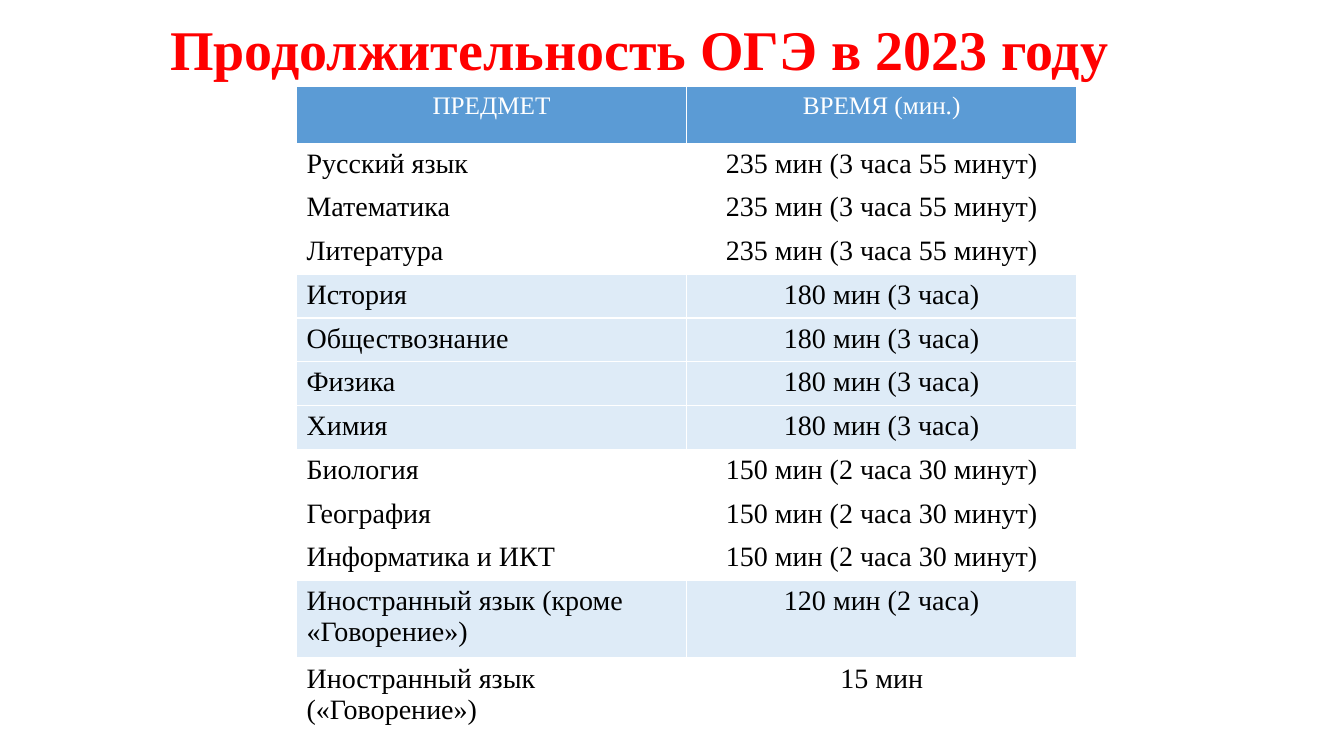
"""Build a slide with the table of exam durations by subject."""
import pptx
import pptx.util
import pptx.dml.color
import pptx.enum.text

Inches = pptx.util.Inches
Pt = pptx.util.Pt
RGBColor = pptx.dml.color.RGBColor
ALIGN = pptx.enum.text.PP_ALIGN

RED = RGBColor(0xFF, 0x00, 0x00)
BLUE = RGBColor(0x5B, 0x9B, 0xD5)
PALE = RGBColor(0xDE, 0xEB, 0xF7)
WHITE = RGBColor(0xFF, 0xFF, 0xFF)
BLACK = RGBColor(0x00, 0x00, 0x00)
FACE = "Times New Roman"

GROUPS = [
    ("235 мин (3 часа 55 минут)", None, 0.43,
     ["Русский язык", "Математика", "Литература"]),
    ("180 мин (3 часа)", PALE, 0.43,
     ["История", "Обществознание", "Физика", "Химия"]),
    ("150 мин (2 часа 30 минут)", None, 0.43,
     ["Биология", "География", "Информатика и ИКТ"]),
    ("120 мин (2 часа)", PALE, 0.77, ["Иностранный язык (кроме «Говорение»)"]),
    ("15 мин", None, 0.77, ["Иностранный язык («Говорение»)"]),
]


def style(para, size, color, bold=False):
    para.font.name = FACE
    para.font.size = Pt(size)
    para.font.bold = bold
    para.font.color.rgb = color


deck = pptx.Presentation()
deck.slide_width = Inches(13.33)
deck.slide_height = Inches(7.5)
slide = deck.slides.add_slide(deck.slide_layouts[6])

title = slide.shapes.add_textbox(
    Inches(1.59), Inches(0.21), Inches(11.26), Inches(0.65)).text_frame
title.word_wrap = True
title.vertical_anchor = pptx.enum.text.MSO_ANCHOR.BOTTOM
head = title.paragraphs[0]
head.text = "Продолжительность ОГЭ в\u00a02023 году".replace("\u00a0", " ")
head.alignment = ALIGN.JUSTIFY
head.line_spacing = 0.8
style(head, 40, RED, True)

rows = [("ПРЕДМЕТ", "ВРЕМЯ (мин.)", BLUE, 0.56)]
for time, fill, height, names in GROUPS:
    rows += [(name, time, fill, height) for name in names]

total = sum(row[3] for row in rows)
table = slide.shapes.add_table(
    len(rows), 2, Inches(2.94), Inches(0.86), Inches(7.74), Inches(total)).table
table.horz_banding = False

for i, (name, time, fill, height) in enumerate(rows):
    table.rows[i].height = Inches(height)
    for j, text in enumerate((name, time)):
        cell = table.cell(i, j)
        if fill is None:
            cell.fill.background()
        else:
            cell.fill.solid()
            cell.fill.fore_color.rgb = fill
        para = cell.text_frame.paragraphs[0]
        para.text = text
        para.alignment = ALIGN.CENTER if i == 0 or j == 1 else ALIGN.LEFT
        style(para, 18 if i == 0 else 20, WHITE if i == 0 else BLACK)

deck.save("out.pptx")
